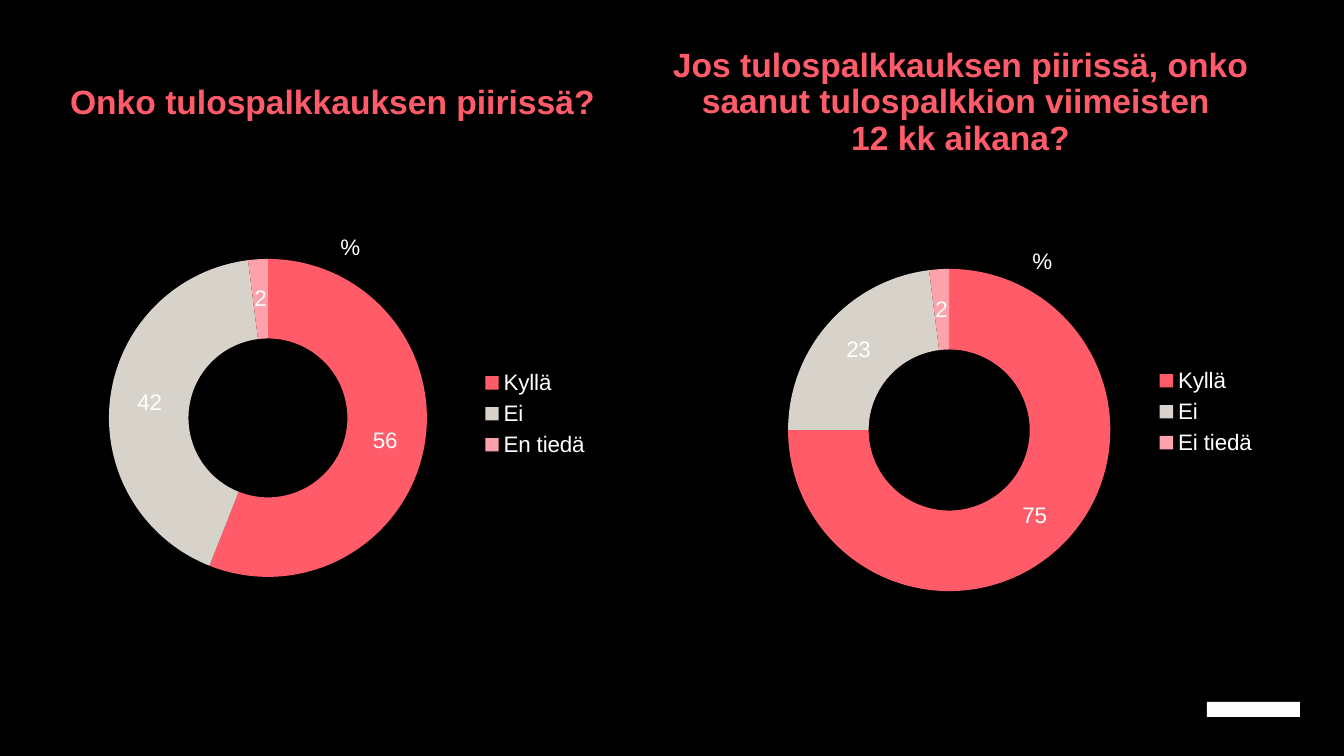
import pptx
import pptx.chart.data
import pptx.dml.color
import pptx.enum.chart
import pptx.enum.shapes
import pptx.enum.text
import pptx.oxml
import pptx.oxml.ns
import pptx.util

PX = 914400 / 100.8
FONT = "Arial"
BLACK = pptx.dml.color.RGBColor(0x00, 0x00, 0x00)
WHITE = pptx.dml.color.RGBColor(0xFF, 0xFF, 0xFF)
CORAL = pptx.dml.color.RGBColor(0xFF, 0x5B, 0x69)
SAND = pptx.dml.color.RGBColor(0xD7, 0xD2, 0xCA)
PINK = pptx.dml.color.RGBColor(0xFD, 0xA2, 0xAA)


def px(n):
    """Turn pixels into EMU."""
    return pptx.util.Emu(round(n * PX))


def style_font(font, size=16, color=WHITE, bold=False):
    """Set typeface, size, colour and weight of a font."""
    font.name = FONT
    font.size = pptx.util.Pt(size)
    font.bold = bold
    font.color.rgb = color


def write_text(tf, text, align=None, spacing=None, **fmt):
    """Write one paragraph per line of text in the given format."""
    for i, line in enumerate(text.split("\n")):
        p = tf.add_paragraph() if i else tf.paragraphs[0]
        p.alignment = align
        p.line_spacing = spacing
        r = p.add_run()
        r.text = line
        style_font(r.font, **fmt)


def add_heading(sp, box, text):
    """Place a heading shape in its box and fill it with text."""
    sp.left, sp.top, sp.width, sp.height = map(px, box)
    tf = sp.text_frame
    tf.word_wrap = True
    tf.auto_size = pptx.enum.text.MSO_AUTO_SIZE.NONE
    tf.vertical_anchor = pptx.enum.text.MSO_ANCHOR.MIDDLE
    tf.margin_left = 0
    tf.margin_right = px(10)
    tf.margin_top = tf.margin_bottom = px(5)
    write_text(tf, text, align=pptx.enum.text.PP_ALIGN.CENTER, spacing=0.9,
               size=24, color=CORAL, bold=True)


def set_layout(element, index, box, area, inner=False):
    """Fix a chart part at an area in pixels relative to the chart box."""
    for old in element.findall(pptx.oxml.ns.qn("c:layout")):
        element.remove(old)
    sizes = (box[2], box[3]) * 2
    values = [("xMode", "edge"), ("yMode", "edge")]
    if inner:
        values.insert(0, ("layoutTarget", "inner"))
    values += [(key, round(n / size, 3))
               for key, n, size in zip("xywh", area, sizes)]
    tags = "".join(f'<c:{key} val="{val}"/>' for key, val in values)
    element.insert(index, pptx.oxml.parse_xml(
        f'<c:layout {pptx.oxml.ns.nsdecls("c")}>'
        f'<c:manualLayout>{tags}</c:manualLayout></c:layout>'))


def add_doughnut(slide, box, answers, plot_area, title_at, legend_area):
    """Draw a doughnut of answer shares with its title and legend."""
    data = pptx.chart.data.CategoryChartData(number_format="0")
    data.categories = list(answers)
    data.add_series("%", list(answers.values()))
    chart = slide.shapes.add_chart(
        pptx.enum.chart.XL_CHART_TYPE.DOUGHNUT, *map(px, box), data).chart
    style_font(chart.font)

    chart.has_title = True
    write_text(chart.chart_title.text_frame, "%")
    chart.chart_title.include_in_layout = False
    set_layout(chart.chart_title._element, 1, box, title_at)

    chart.has_legend = True
    chart.legend.position = pptx.enum.chart.XL_LEGEND_POSITION.RIGHT
    chart.legend.include_in_layout = False
    style_font(chart.legend.font)
    set_layout(chart.legend._element, 1, box, legend_area)

    plot = chart.plots[0]
    plot.vary_by_categories = True
    plot.has_data_labels = True
    labels = plot.data_labels
    labels.show_value = True
    labels.show_percentage = False
    labels.number_format = "0"
    labels.number_format_is_linked = False
    style_font(labels.font)
    for i, color in enumerate((CORAL, SAND, PINK)):
        point = plot.series[0].points[i]
        point.format.fill.solid()
        point.format.fill.fore_color.rgb = color
        point.format.line.fill.background()
    set_layout(chart._chartSpace.chart.plotArea, 0, box, plot_area, inner=True)


def add_emblem(slide, box):
    """Place a plain bar in the corner of the slide."""
    sp = slide.shapes.add_shape(
        pptx.enum.shapes.MSO_SHAPE.RECTANGLE, *map(px, box))
    sp.shadow.inherit = False
    sp.fill.solid()
    sp.fill.fore_color.rgb = WHITE
    sp.line.fill.background()


def build_slide(prs):
    """Build the slide with two headings and two doughnuts."""
    slide = prs.slides.add_slide(prs.slide_layouts[5])
    slide.background.fill.solid()
    slide.background.fill.fore_color.rgb = BLACK
    add_emblem(slide, (1207, 702, 93, 15))

    add_heading(slide.shapes.title, (40, 55, 595, 98),
                "Onko tulospalkkauksen piirissä?")
    add_doughnut(slide, (20, 153, 635, 517),
                 {"Kyllä": 56, "Ei": 42, "En tiedä": 2},
                 plot_area=(71, 106, 354, 318),
                 title_at=(316, 76), legend_area=(458, 211, 114, 100))

    box = (648, 65, 635, 76)
    add_heading(slide.shapes.add_textbox(*map(px, box)), box,
                "Jos tulospalkkauksen piirissä, onko saanut tulospalkkion "
                "viimeisten \n12 kk aikana?")
    add_doughnut(slide, (675, 153, 608, 517),
                 {"Kyllä": 75, "Ei": 23, "Ei tiedä": 2},
                 plot_area=(113, 52, 322, 450),
                 title_at=(353, 90), legend_area=(478, 209, 106, 100))


def main():
    """Create the presentation and save it."""
    prs = pptx.Presentation()
    prs.slide_width, prs.slide_height = px(1344), px(756)
    build_slide(prs)
    prs.save("out.pptx")


if __name__ == "__main__":
    main()
